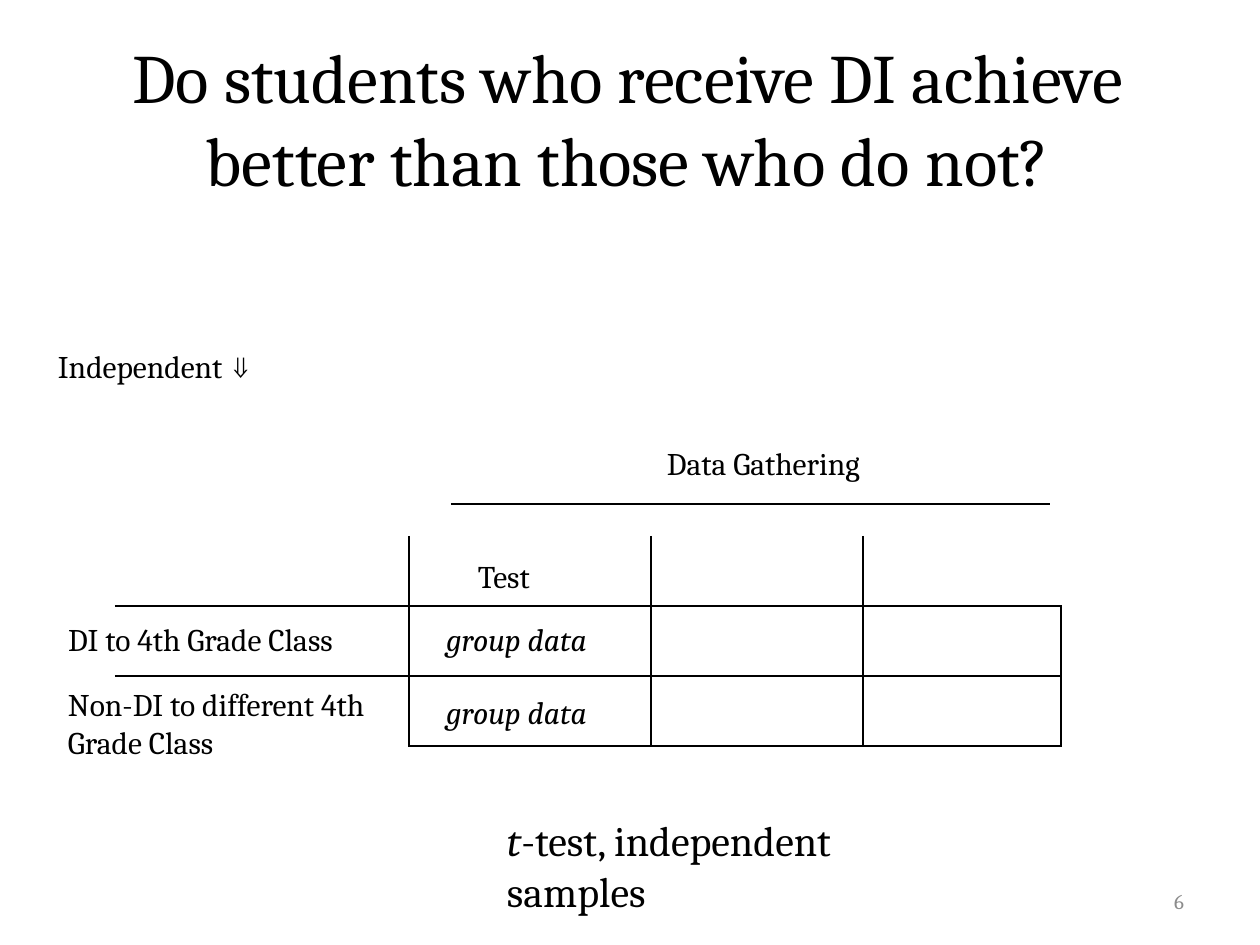
from dataclasses import dataclass

import lxml.etree
import pptx
import pptx.dml.color
import pptx.enum.shapes
import pptx.enum.text
import pptx.oxml
import pptx.oxml.ns
import pptx.util

EMU_PER_PX = 914400 / 126
BLACK = pptx.dml.color.RGBColor(0x00, 0x00, 0x00)
GREY = pptx.dml.color.RGBColor(0x8C, 0x8C, 0x8C)
FONT = "Cambria"
ALIGN = pptx.enum.text.PP_ALIGN
ANCHOR = pptx.enum.text.MSO_ANCHOR

LABEL_MARGINS = (5, 0, 5, 0)
BOX_MARGINS = (13, 6, 13, 6)
COLUMN_WIDTHS = (294, 242, 212, 198)
ROW_HEIGHT = 70
ROW_COUNT = 3


@dataclass
class Span:
    text: str
    italic: bool = False
    font: str = FONT


@dataclass
class Label:
    left: int
    top: int
    width: int
    height: int
    spans: list[Span]
    size: float = 18
    space_before: float = 0
    margins: tuple[int, int, int, int] = LABEL_MARGINS
    color: pptx.dml.color.RGBColor = BLACK
    align: ALIGN = ALIGN.LEFT
    anchor: ANCHOR = ANCHOR.TOP


def px(length: int) -> pptx.util.Emu:
    return pptx.util.Emu(round(length * EMU_PER_PX))


def write_label(box, label: Label) -> None:
    """Place a text box or placeholder and fill it run by run."""
    box.left, box.top = px(label.left), px(label.top)
    box.width, box.height = px(label.width), px(label.height)
    frame = box.text_frame
    frame.word_wrap = True
    frame.auto_size = pptx.enum.text.MSO_AUTO_SIZE.NONE
    frame.vertical_anchor = label.anchor
    (frame.margin_left, frame.margin_top,
     frame.margin_right, frame.margin_bottom) = map(px, label.margins)
    para = frame.paragraphs[0]
    para.alignment = label.align
    para.space_before = pptx.util.Pt(label.space_before)
    for span in label.spans:
        run = para.add_run()
        run.text = span.text
        run.font.name = span.font
        run.font.size = pptx.util.Pt(label.size)
        run.font.italic = span.italic
        run.font.color.rgb = label.color


def set_borders(cell, visible: dict[str, bool]) -> None:
    """Give each side (L, R, T, B) a thin black line or none."""
    properties = cell._tc.get_or_add_tcPr()
    for index, (side, shown) in enumerate(visible.items()):
        paint = (f'<a:solidFill><a:srgbClr val="{BLACK}"/></a:solidFill>'
                 if shown else "<a:noFill/>")
        line = pptx.oxml.parse_xml(
            f'<a:ln{side} {pptx.oxml.ns.nsdecls("a")} w="12700">{paint}</a:ln{side}>')
        properties.insert(index, line)


def add_grid(slide, left: int, top: int) -> None:
    """Add the empty design grid, open at its left and top edges."""
    last_row, last_column = ROW_COUNT - 1, len(COLUMN_WIDTHS) - 1
    frame = slide.shapes.add_table(
        ROW_COUNT, len(COLUMN_WIDTHS), px(left), px(top),
        px(sum(COLUMN_WIDTHS)), px(ROW_COUNT * ROW_HEIGHT))
    table = frame.table
    table.first_row = table.horz_banding = False
    for column, width in zip(table.columns, COLUMN_WIDTHS):
        column.width = px(width)
    for row_index, row in enumerate(table.rows):
        row.height = px(ROW_HEIGHT)
        for column_index, cell in enumerate(row.cells):
            cell.fill.background()
            set_borders(cell, {
                "L": column_index > 0,
                "R": column_index < last_column or row_index > 0,
                "T": row_index > 0,
                "B": row_index < last_row or column_index > 0,
            })


def add_rule(slide, left: int, right: int, top: int) -> None:
    rule = slide.shapes.add_connector(
        pptx.enum.shapes.MSO_CONNECTOR.STRAIGHT, px(left), px(top), px(right), px(top))
    rule.line.color.rgb = BLACK
    rule.line.width = pptx.util.Pt(1)
    lxml.etree.SubElement(rule._element.spPr, pptx.oxml.ns.qn("a:effectLst"))


TITLE = Label(63, 38, 1134, 158,
              [Span("Do students who receive DI achieve better than those who do not?")],
              size=39.6, margins=(13, 6, 18, 6), align=ALIGN.CENTER, anchor=ANCHOR.MIDDLE)

LABELS = [
    # Row and column headings
    Label(63, 620, 284, 38, [Span("DI to 4th Grade Class")]),
    Label(63, 685, 329, 86, [Span("Non-DI to different 4th Grade Class")]),
    Label(473, 557, 165, 49, [Span("Test")], space_before=10.5),
    # Grid contents
    *(Label(441, top, 160, 38, [Span("group data", italic=True)]) for top in (620, 693)),
    # Variable captions
    Label(53, 347, 262, 53, [Span("Independent "), Span("⇓", font="Arial")],
          space_before=10.5),
    Label(662, 444, 262, 49, [Span("Data Gathering")], space_before=10.5),
    # Statistical test
    Label(494, 809, 485, 63, [Span("t", italic=True), Span("-test, independent samples")],
          size=24, margins=BOX_MARGINS),
    # Slide number
    Label(903, 876, 294, 50, [Span("6")], size=12, margins=BOX_MARGINS,
          color=GREY, align=ALIGN.RIGHT, anchor=ANCHOR.MIDDLE),
]


def main() -> None:
    deck = pptx.Presentation()
    deck.slide_width, deck.slide_height = px(1260), px(945)
    slide = deck.slides.add_slide(deck.slide_layouts[5])

    write_label(slide.shapes.title, TITLE)
    add_grid(slide, left=115, top=536)
    add_rule(slide, left=451, right=1050, top=504)
    for label in LABELS:
        box = slide.shapes.add_textbox(0, 0, 0, 0)
        write_label(box, label)

    deck.save("out.pptx")


if __name__ == "__main__":
    main()
